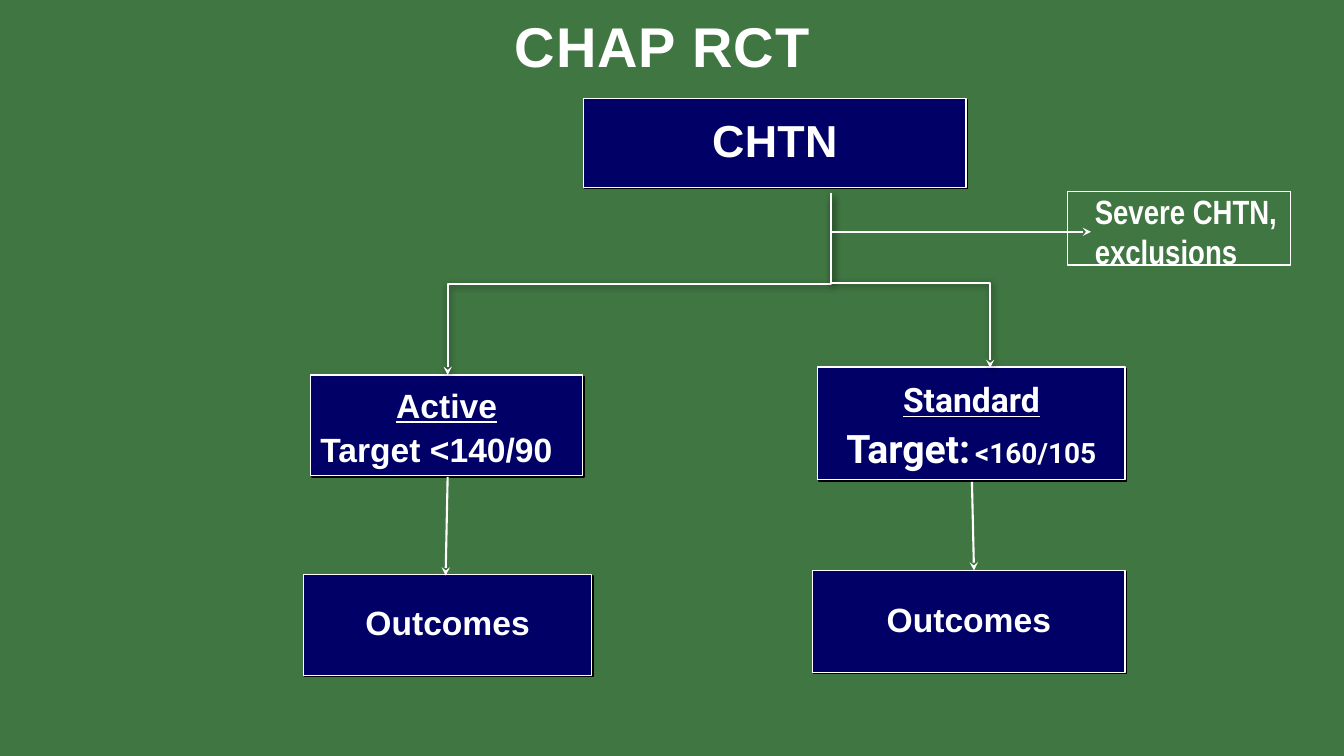
from dataclasses import dataclass

from lxml.etree import SubElement
from pptx import Presentation
from pptx.dml.color import RGBColor
from pptx.enum.shapes import MSO_CONNECTOR as Connector, MSO_SHAPE as Shape
from pptx.enum.text import MSO_ANCHOR as Anchor, MSO_AUTO_SIZE as AutoSize, PP_ALIGN as Align
from pptx.oxml.ns import qn
from pptx.util import Inches, Pt


@dataclass(frozen=True)
class Theme:
    background: RGBColor = RGBColor(0x40, 0x76, 0x42)
    box: RGBColor = RGBColor(0x00, 0x00, 0x66)
    white: RGBColor = RGBColor(0xFF, 0xFF, 0xFF)
    shadow: str = "000000"
    font: str = "Arial"
    narrow: str = "Arial Narrow"
    alternate: str = "Roboto"
    title: int = 40
    heading: int = 32
    target: int = 28
    body: int = 24
    value: int = 20
    gap: int = 14


THEME = Theme()


def set_shadow(shape, opacity=None, blur=0):
    """Give the shape a short diagonal shadow, or none without an opacity."""
    properties = shape.element.spPr
    effects = properties.find(qn("a:effectLst"))
    if effects is None:
        effects = SubElement(properties, qn("a:effectLst"))
    if opacity:
        shadow = SubElement(effects, qn("a:outerShdw"), blurRad=str(Pt(blur)),
                            dist=str(Pt(1.4)), dir="2700000", algn="ctr", rotWithShape="0")
        color = SubElement(shadow, qn("a:srgbClr"), val=THEME.shadow)
        SubElement(color, qn("a:alpha"), val=str(opacity * 1000))


def style_font(font, size, name=THEME.font):
    font.name = name
    font.size = Pt(size)
    font.bold = True
    font.color.rgb = THEME.white


def add_frame(slide, bounds, filled=True):
    shape = slide.shapes.add_shape(Shape.RECTANGLE, *map(Inches, bounds))
    shape.shadow.inherit = False
    shape.line.color.rgb = THEME.white
    shape.line.width = Pt(1)
    if filled:
        shape.fill.solid()
        shape.fill.fore_color.rgb = THEME.box
        set_shadow(shape, 100)
    else:
        shape.fill.background()
    return shape


def add_box(slide, bounds, lines, size=THEME.body, spacing=0.9, name=THEME.font):
    """Draw a filled box and return its paragraphs, one for each line."""
    frame = add_frame(slide, bounds).text_frame
    frame.word_wrap = True
    frame.vertical_anchor = Anchor.MIDDLE
    frame.text = "\n".join(lines)
    for paragraph in frame.paragraphs:
        paragraph.alignment = Align.CENTER
        paragraph.line_spacing = spacing
        style_font(paragraph.font, size, name)
    return frame.paragraphs


def add_label(slide, bounds, text, size, name=THEME.font):
    frame = slide.shapes.add_textbox(*map(Inches, bounds)).text_frame
    frame.word_wrap = True
    frame.text = text
    style_font(frame.paragraphs[0].font, size, name)
    return frame


def style_arrow(connector):
    connector.line.color.rgb = THEME.white
    connector.line.width = Pt(1.5)
    SubElement(connector.line._get_or_add_ln(), qn("a:tailEnd"), type="stealth")


def add_arrow(slide, start, end):
    connector = slide.shapes.add_connector(Connector.STRAIGHT, *map(Inches, start + end))
    style_arrow(connector)
    set_shadow(connector)


def add_elbow(slide, start, end, preset="bentConnector3", shadow=None):
    """Draw a bent arrow that leaves its start downwards."""
    (x1, y1), (x2, y2) = start, end
    width, height = y2 - y1, abs(x2 - x1)
    left, top = (x1 + x2 - width) / 2, (y1 + y2 - height) / 2
    connector = slide.shapes.add_connector(
        Connector.ELBOW, *map(Inches, (left, top, left + width, top + height)))
    properties = connector.element.spPr
    properties.find(qn("a:prstGeom")).set("prst", preset)
    transform = properties.find(qn("a:xfrm"))
    if x2 < x1:
        transform.set("rot", "5400000")
    else:
        transform.set("rot", "16200000")
        transform.set("flipH", "1")
    style_arrow(connector)
    set_shadow(connector, shadow, 5)


def add_active_arm(slide):
    heading, target = add_box(slide, (3.08, 3.72, 2.7, 1),
                              ["Active", "Target <140/90"], spacing=1.1)
    heading.font.underline = True
    target.alignment = Align.LEFT


def add_standard_arm(slide):
    heading, target = add_box(slide, (8.11, 3.64, 3.05, 1.12), ["Standard", ""],
                              spacing=1.1, name=THEME.alternate)
    heading.font.underline = True
    for text, size in (("Target:", THEME.target), (" ", THEME.gap), ("<160/105", THEME.value)):
        run = target.add_run()
        run.text = text
        style_font(run.font, size, THEME.alternate)


def main():
    presentation = Presentation()
    presentation.slide_width = Inches(13.33)
    presentation.slide_height = Inches(7.5)
    slide = presentation.slides.add_slide(presentation.slide_layouts[6])
    slide.background.fill.solid()
    slide.background.fill.fore_color.rgb = THEME.background

    population, = add_box(slide, (5.79, 0.98, 3.79, 0.88), ["CHTN"], THEME.heading)
    population.runs[0].font._element.set("spc", "20")
    add_active_arm(slide)
    add_standard_arm(slide)
    for bounds in ((3.01, 5.7, 2.86, 1), (8.06, 5.66, 3.1, 1.01)):
        add_box(slide, bounds, ["Outcomes"])

    add_elbow(slide, (8.24, 1.92), (4.44, 3.72), shadow=50)
    add_elbow(slide, (8.24, 1.97), (9.82, 3.65), shadow=50)
    add_arrow(slide, (9.64, 4.78), (9.66, 5.66))
    add_arrow(slide, (4.44, 4.73), (4.42, 5.71))

    exclusions = add_label(slide, (10.76, 1.84, 2.14, 0.91), "Severe CHTN, exclusions",
                           THEME.body, THEME.narrow)
    exclusions.auto_size = AutoSize.SHAPE_TO_FIT_TEXT
    add_frame(slide, (10.59, 1.9, 2.21, 0.73), filled=False)
    add_elbow(slide, (8.24, 1.91), (10.82, 2.3), "bentConnector2")

    title = add_label(slide, (1.79, 0, 9.56, 0.78), "CHAP RCT", THEME.title)
    title.margin_top = Inches(0.11)
    title.paragraphs[0].alignment = Align.CENTER
    title.paragraphs[0].runs[0].font._element.set("spc", "70")

    presentation.save("out.pptx")


if __name__ == "__main__":
    main()
